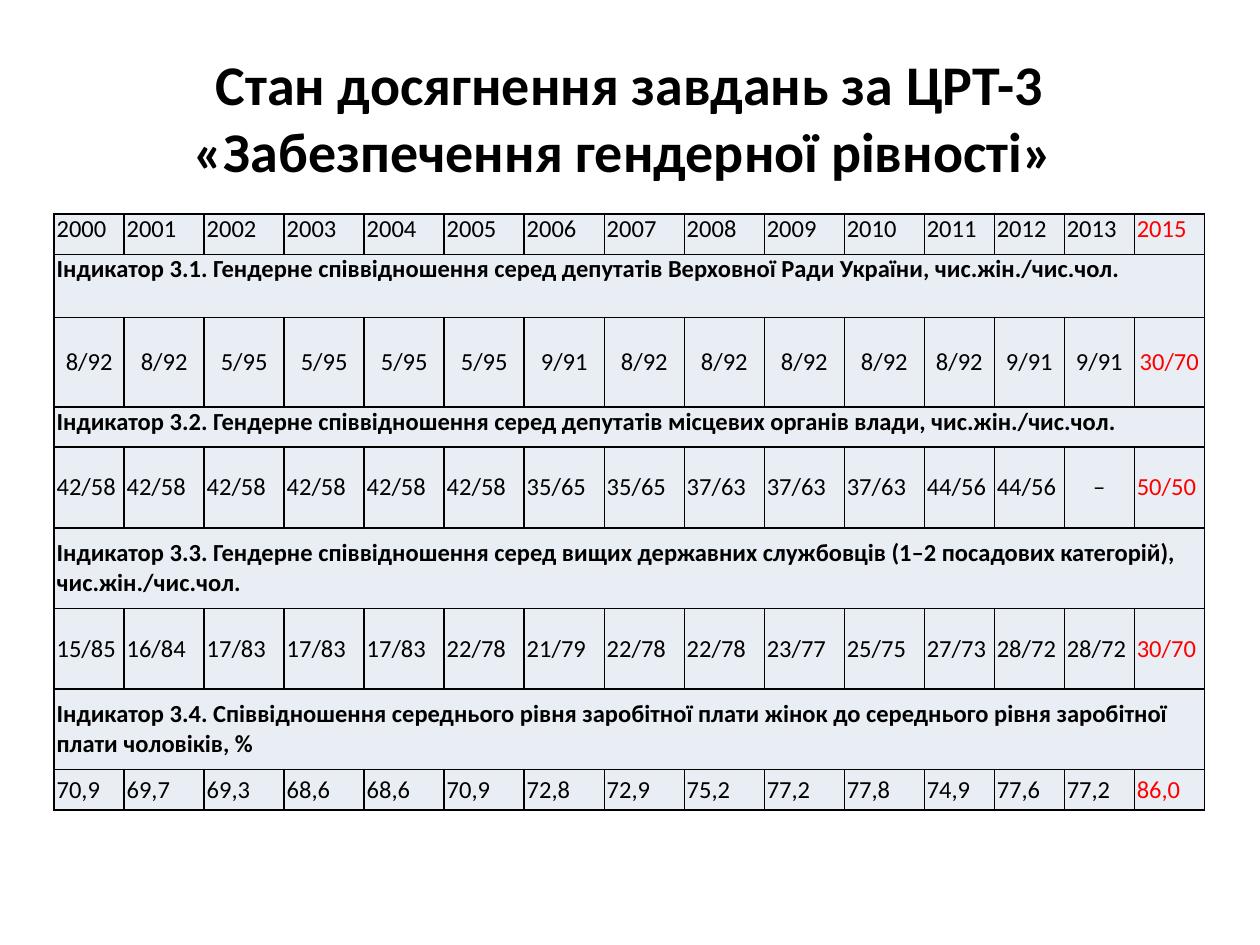
from lxml.etree import SubElement
from pptx import Presentation
from pptx.dml.color import RGBColor
from pptx.enum.text import MSO_ANCHOR, PP_ALIGN
from pptx.oxml.ns import qn
from pptx.util import Inches, Pt

BLACK, RED, PALE = "000000", "FF0000", "E9EDF4"
TITLE = "Стан досягнення завдань за ЦРТ-3 «Забезпечення гендерної рівності» "

# Column widths are counted in units that fill the table's width
UNITS = [7] + [8] * 10 + [7] * 4
WIDTH = 9.13

# Each row: height, anchor, alignment, content (text spans all columns)
TOP, MID = MSO_ANCHOR.TOP, MSO_ANCHOR.MIDDLE
LEFT, CENTER, JUSTIFY = PP_ALIGN.LEFT, PP_ALIGN.CENTER, PP_ALIGN.JUSTIFY
ROWS = [
    (0.32, TOP, JUSTIFY, [str(year) for year in (*range(2000, 2014), 2015)]),
    (0.5, TOP, LEFT, "Індикатор 3.1. Гендерне співвідношення серед депутатів "
     "Верховної Ради України, чис.жін./чис.чол."),
    (0.71, MID, CENTER, "8/92 8/92 5/95 5/95 5/95 5/95 9/91 8/92 8/92 8/92 "
     "8/92 8/92 9/91 9/91 30/70".split()),
    (0.32, TOP, LEFT, "Індикатор 3.2. Гендерне співвідношення серед депутатів "
     "місцевих органів влади, чис.жін./чис.чол."),
    (0.64, MID, LEFT, "42/58 42/58 42/58 42/58 42/58 42/58 35/65 35/65 37/63 "
     "37/63 37/63 44/56 44/56 – 50/50".split()),
    (0.64, MID, LEFT, "Індикатор 3.3. Гендерне співвідношення серед вищих "
     "державних службовців (1–2 посадових категорій), чис.жін./чис.чол."),
    (0.64, MID, LEFT, "15/85 16/84 17/83 17/83 17/83 22/78 21/79 22/78 22/78 "
     "23/77 25/75 27/73 28/72 28/72 30/70".split()),
    (0.64, MID, LEFT, "Індикатор 3.4. Співвідношення середнього рівня заробітної "
     "плати жінок до середнього рівня заробітної плати чоловіків, %"),
    (0.32, MID, LEFT, "70,9 69,7 69,3 68,6 68,6 70,9 72,8 72,9 75,2 77,2 77,8 "
     "74,9 77,6 77,2 86,0".split()),
]


def color(code):
    return RGBColor.from_string(code)


def set_font(para, size, code, bold):
    font = para.font
    font.name, font.size, font.bold = "Calibri", Pt(size), bold
    font.color.rgb = color(code)


def add_title(slide):
    title = slide.shapes.title
    title.left, title.top = Inches(0.5), Inches(0.3)
    title.width, title.height = Inches(9), Inches(1.25)
    frame = title.text_frame
    frame.text = TITLE
    frame.vertical_anchor = MID
    para = frame.paragraphs[0]
    para.alignment = CENTER
    set_font(para, 32, BLACK, True)


def set_border(cell):
    props = cell._tc.get_or_add_tcPr()
    for side in ("lnL", "lnR", "lnT", "lnB"):
        line = SubElement(props, qn(f"a:{side}"), w=str(Pt(1)))
        fill = SubElement(line, qn("a:solidFill"))
        SubElement(fill, qn("a:srgbClr"), val=BLACK)


def style_cell(cell):
    set_border(cell)
    cell.fill.solid()
    cell.fill.fore_color.rgb = color(PALE)
    cell.margin_left = cell.margin_right = Inches(0.02)
    cell.margin_top = cell.margin_bottom = 0


def write_cell(cell, text, anchor, align, code=BLACK, bold=False):
    cell.text = text
    cell.vertical_anchor = anchor
    para = cell.text_frame.paragraphs[0]
    para.alignment = align
    set_font(para, 14, code, bold)


def fill_row(cells, anchor, align, content):
    for cell in cells:
        style_cell(cell)
    # Indicator heading across the table
    if isinstance(content, str):
        cells[0].merge(cells[-1])
        write_cell(cells[0], content, anchor, align, bold=True)
        return
    # Yearly values, with the target in the last column
    last = len(content) - 1
    for col, text in enumerate(content):
        place = CENTER if text == "–" else align
        write_cell(cells[col], text, anchor, place, RED if col == last else BLACK)


def add_grid(slide):
    height = sum(row[0] for row in ROWS)
    table = slide.shapes.add_table(
        len(ROWS), len(UNITS), Inches(0.43), Inches(1.7),
        Inches(WIDTH), Inches(height)).table
    table.first_row = table.horz_banding = False
    for col, units in zip(table.columns, UNITS):
        col.width = Inches(WIDTH * units / sum(UNITS))
    for row, (high, anchor, align, content) in zip(table.rows, ROWS):
        row.height = Inches(high)
        fill_row(list(row.cells), anchor, align, content)


def main():
    deck = Presentation()
    deck.slide_width, deck.slide_height = Inches(10), Inches(7.5)
    slide = deck.slides.add_slide(deck.slide_layouts[5])
    add_title(slide)
    add_grid(slide)
    deck.save("out.pptx")


if __name__ == "__main__":
    main()
